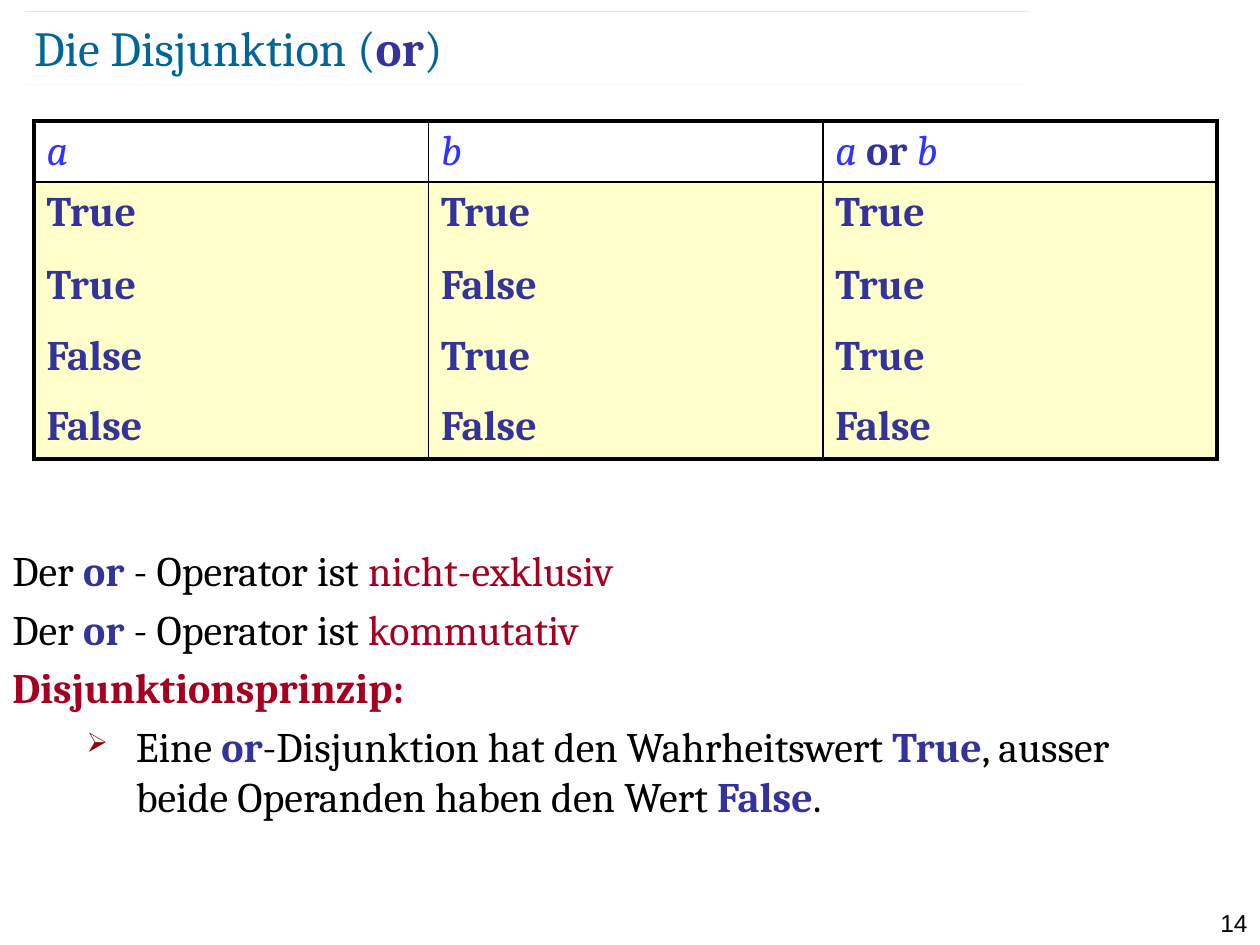
"""Build a slide on logical disjunction with its truth table and rules."""
from lxml import etree
from pptx import Presentation
from pptx import util as u
from pptx.dml import color
from pptx.enum import shapes, text
from pptx.oxml import ns

COLORS = {"title": "006699", "keyword": "333399", "variable": "3333FF",
          "accent": "A50021", "body": "000000", "cell": "FFFFCC",
          "bullet": "8B0000"}
BOLD = ("keyword", "heading")


def add_runs(p, runs, size, font="Cambria"):
    for words, style in runs:
        r = p.add_run()
        r.text = words
        r.font.size = u.Pt(size)
        r.font.name = font
        r.font.bold = style in BOLD
        r.font.italic = style == "variable"
        name = "accent" if style == "heading" else style
        r.font.color.rgb = color.RGBColor.from_string(COLORS[name])


def add_xml(parent, tag, **attrs):
    return etree.SubElement(parent, ns.qn(tag), **attrs)


prs = Presentation()
prs.slide_width, prs.slide_height = u.Inches(10), u.Inches(7.5)
s = prs.slides.add_slide(prs.slide_layouts[5])

for left, top in ((0.18, 0.67), (0.2, 0.09)):
    line = s.shapes.add_connector(
        shapes.MSO_CONNECTOR.STRAIGHT, u.Inches(left), u.Inches(top),
        u.Inches(left + 7.97), u.Inches(top))
    line.line.width = u.Pt(0.1)
    line.line.color.rgb = color.RGBColor.from_string(COLORS["title"])
    add_xml(line.line.fill._xPr.find(".//" + ns.qn("a:srgbClr")), "a:alpha", val="35000")
    add_xml(line._element.spPr, "a:effectLst")

title = s.shapes.title
title.left, title.top = u.Inches(0.27), u.Inches(0.13)
title.width, title.height = u.Inches(8.69), u.Inches(0.48)
tf = title.text_frame
tf.margin_left = tf.margin_right = tf.margin_top = tf.margin_bottom = 0
tf.vertical_anchor = text.MSO_ANCHOR.MIDDLE
tf.auto_size = text.MSO_AUTO_SIZE.NONE
p = tf.paragraphs[0]
p.alignment = text.PP_ALIGN.LEFT
add_runs(p, [("Die Disjunktion (", "title"), ("or", "keyword"), (")", "title")], 28)

header = [[("a", "variable")], [("b", "variable")],
          [("a ", "variable"), ("or ", "keyword"), ("b", "variable")]]
truth = [(a, b, a or b) for a in (True, False) for b in (True, False)]
rows = [header] + [[[(str(value), "keyword")] for value in row] for row in truth]
heights = (0.48, 0.58, 0.57, 0.55, 0.5)
frame = s.shapes.add_table(5, 3, u.Inches(0.27), u.Inches(0.96),
                           u.Inches(9.4), u.Inches(sum(heights)))
table = frame.table
table.first_row = table.horz_banding = False
table._tbl.tblPr.find(ns.qn("a:tableStyleId")).text = "{2D5ABB26-0587-4C30-8999-92F81FD0307C}"
for column in table.columns:
    column.width = u.Inches(3.13)
for i, row in enumerate(rows):
    table.rows[i].height = u.Inches(heights[i])
    for j, runs in enumerate(row):
        cell = table.cell(i, j)
        add_runs(cell.text_frame.paragraphs[0], runs, 24)
        borders = {"L": 1 if j else 2.25, "R": 2.25 if j == 2 else 1,
                   "T": (2.25, 1, 0, 0, 0)[i], "B": (1, 0, 0, 0, 2.25)[i]}
        tc_pr = cell._tc.get_or_add_tcPr()
        for side, width in borders.items():
            ln = add_xml(tc_pr, "a:ln" + side, w=str(u.Pt(width)))
            if width:
                fill = add_xml(ln, "a:solidFill")
                add_xml(fill, "a:srgbClr", val=COLORS["body"])
            else:
                add_xml(ln, "a:noFill")
        if i:
            cell.fill.solid()
            cell.fill.fore_color.rgb = color.RGBColor.from_string(COLORS["cell"])
        else:
            cell.fill.background()

operator = [("Der", "body"), (" or ", "keyword"), ("- Operator ist ", "body")]
rules = [
    operator + [("nicht-exklusiv", "accent")],
    operator + [("kommutativ", "accent")],
    [("Disjunktionsprinzip:", "heading")],
    [("Eine ", "body"), ("or", "keyword"),
     ("-Disjunktion hat den Wahrheitswert ", "body"), ("True", "keyword"),
     (", ausser beide Operanden haben den Wert ", "body"),
     ("False", "keyword"), (".", "body")],
]
body = s.shapes.add_textbox(u.Inches(0), u.Inches(4.27), u.Inches(9.53), u.Inches(2.71))
tf = body.text_frame
tf.word_wrap = True
for i, runs in enumerate(rules):
    p = tf.add_paragraph() if i else tf.paragraphs[0]
    if i:
        p.space_before = u.Pt(4.8)
    if i == len(rules) - 1:
        p.level = 1
        p_pr = p._p.get_or_add_pPr()
        p_pr.set("marL", str(u.Inches(0.98)))
        p_pr.set("indent", str(u.Inches(-0.39)))
        add_xml(add_xml(p_pr, "a:buClr"), "a:srgbClr", val=COLORS["bullet"])
        add_xml(p_pr, "a:buSzPct", val="65000")
        add_xml(p_pr, "a:buChar", char="➢")
    add_runs(p, runs, 24)

number = s.shapes.add_textbox(u.Inches(9.45), u.Inches(7.16), u.Inches(0.55), u.Inches(0.24))
number.text_frame.word_wrap = True
p = number.text_frame.paragraphs[0]
p.alignment = text.PP_ALIGN.RIGHT
add_runs(p, [("14", "body")], 14, "Arial")

prs.save("out.pptx")
